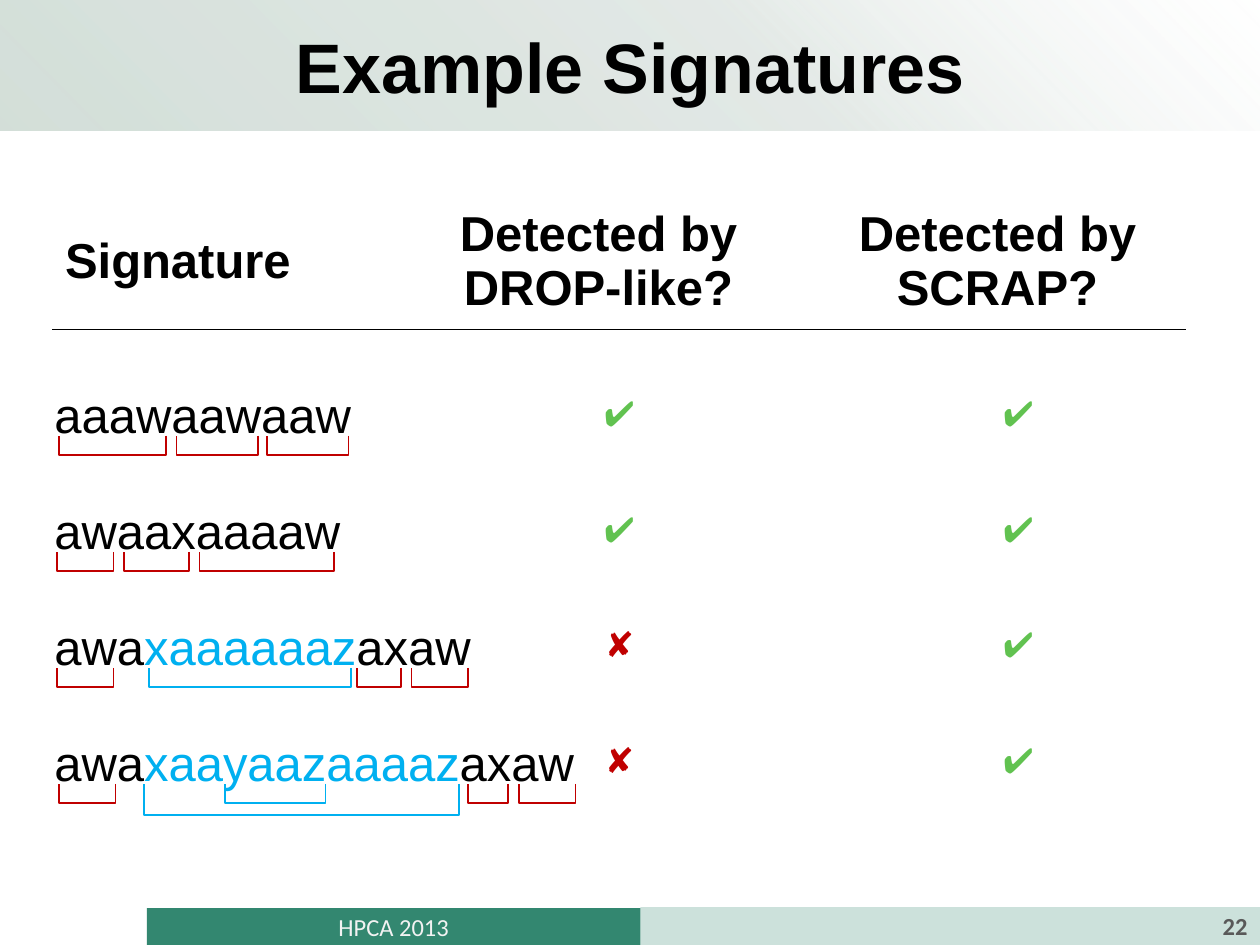
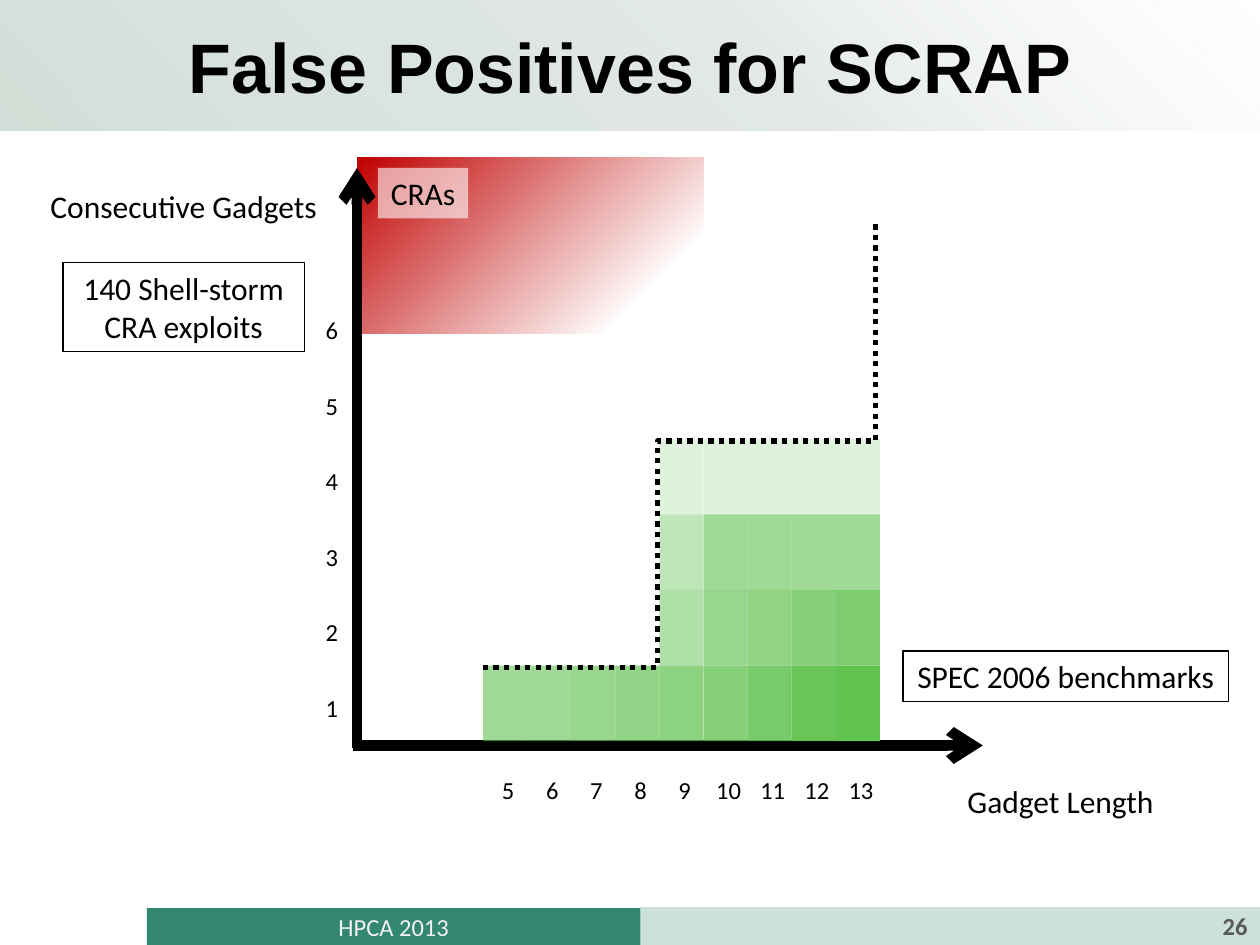
"""Build two slides on gadget signatures and false positives."""
from lxml import etree
from pptx import Presentation
from pptx import util as u
from pptx.dml.color import RGBColor
from pptx.enum import dml, shapes, text
from pptx.oxml.ns import qn

BLACK, WHITE, RED, BLUE, GREEN = "000000", "FFFFFF", "C00000", "00B0F0", "61C250"
BRAND, PALE, GREY = "006A4D", "F2F2F2", "595959"
COLUMNS, ROWS = 120, 90
WIDTH, HEIGHT = u.Inches(10), u.Inches(7.5)
LEFT, CENTER, RIGHT = text.PP_ALIGN.LEFT, text.PP_ALIGN.CENTER, text.PP_ALIGN.RIGHT
TITLE_STOPS = [(0, "9BB5A8", 44), (61, "C3D1CA", 45), (100, "E2E8E5", 0)]
RED_STOPS = [(0, RED, 100), (82, WHITE, 100), (100, WHITE, 100)]
NO_TABLE_STYLE = "{2D5ABB26-0587-4C30-8999-92F81FD0307C}"


def color(value):
    return RGBColor.from_string(value)


def across(columns):
    return round(WIDTH * columns / COLUMNS)


def down(rows):
    return round(HEIGHT * rows / ROWS)


def place(left, top, width, height):
    return across(left), down(top), across(width), down(height)


def add_xml(parent, tag, **attributes):
    return etree.SubElement(parent, qn(tag), {key: str(value) for key, value in attributes.items()})


class Page:
    """One slide on a 120 by 90 grid, with the deck's shared style."""

    def __init__(self, deck, title, number):
        self.slide = deck.slides.add_slide(deck.slide_layouts[5])
        self.shapes = self.slide.shapes
        heading = self.shapes.title
        heading.left, heading.top, heading.width, heading.height = place(0, 0, COLUMNS, 12.4)
        self.gradient(heading, TITLE_STOPS, l=0, t=100000, r=100000, b=0)
        self.set_text(heading.text_frame, title, 40, font="Arial", bold=True)
        self.box((14, 86.5, 47, 3.6), "HPCA 2013", 14, PALE, fill=BRAND, alpha=80)
        self.box((61, 86.4, 59, 3.6), str(number), 14, GREY, bold=True, align=RIGHT,
                 fill=BRAND, alpha=20)

    def set_text(self, frame, content, size, ink=BLACK, font="Calibri", bold=False,
                 align=CENTER, wrap=True):
        frame.auto_size = text.MSO_AUTO_SIZE.NONE
        frame.word_wrap = wrap
        frame.vertical_anchor = text.MSO_ANCHOR.MIDDLE
        self.paragraph(frame.paragraphs[0], content, size, ink, font, bold, align)

    def paragraph(self, para, content, size, ink, font, bold, align):
        para.alignment = align
        para.font.size, para.font.name, para.font.bold = u.Pt(size), font, bold
        para.font.color.rgb = color(ink)
        spans = [(content, ink)] if isinstance(content, str) else content
        for words, span_ink in spans:
            span = para.add_run()
            span.text = words
            if span_ink != ink:
                span.font.color.rgb = color(span_ink)

    def gradient(self, shape, stops, **focus):
        shape.fill.gradient()
        grad = shape.element.spPr.find(qn("a:gradFill"))
        grad.clear()
        grad.set("rotWithShape", "1")
        stop_list = add_xml(grad, "a:gsLst")
        for position, value, alpha in stops:
            stop = add_xml(stop_list, "a:gs", pos=position * 1000)
            add_xml(add_xml(stop, "a:srgbClr", val=value), "a:alpha", val=alpha * 1000)
        add_xml(add_xml(grad, "a:path", path="circle"), "a:fillToRect", **focus)

    def paint(self, shape, fill=None, alpha=100, line=None, weight=1):
        shape.shadow.inherit = False
        if fill:
            shape.fill.solid()
            shape.fill.fore_color.rgb = color(fill)
            if alpha < 100:
                tint = next(shape.element.spPr.iter(qn("a:srgbClr")))
                add_xml(tint, "a:alpha", val=alpha * 1000)
        else:
            shape.fill.background()
        if line:
            shape.line.color.rgb = color(line)
            shape.line.width = u.Pt(weight)
        else:
            shape.line.fill.background()

    def box(self, area, content="", size=18, ink=BLACK, bold=False, align=CENTER,
            wrap=True, **look):
        box = self.shapes.add_shape(shapes.MSO_SHAPE.RECTANGLE, *place(*area))
        self.paint(box, **look)
        if content:
            self.set_text(box.text_frame, content, size, ink, bold=bold, align=align, wrap=wrap)
        return box

    def label(self, area, content, size=18, **style):
        self.set_text(self.shapes.add_textbox(*place(*area)).text_frame, content, size, **style)

    def bracket(self, left, top, width, ink=RED, depth=1.8):
        area = (left + (width - depth) / 2, top + (depth - width) / 2, depth, width)
        bracket = self.shapes.add_shape(shapes.MSO_SHAPE.LEFT_BRACKET, *place(*area))
        bracket.adjustments[0] = 0
        bracket.rotation = 270
        self.paint(bracket, line=ink)

    def table(self, left, top, widths, cells, size, bold=False, underline=False):
        frame = self.shapes.add_table(1, len(widths), *place(left, top, sum(widths), 13))
        next(frame.element.iter(qn("a:tableStyleId"))).text = NO_TABLE_STYLE
        table = frame.table
        table.first_row = table.horz_banding = False
        for index, (width, (content, ink, align)) in enumerate(zip(widths, cells)):
            table.columns[index].width = across(width)
            cell = table.cell(0, index)
            cell.vertical_anchor = text.MSO_ANCHOR.MIDDLE
            self.paragraph(cell.text_frame.paragraphs[0], content, size, ink, "Arial", bold, align)
        if underline:
            for properties in frame.element.iter(qn("a:tcPr")):
                rule = add_xml(properties, "a:lnB", w=u.Pt(1))
                add_xml(add_xml(rule, "a:solidFill"), "a:srgbClr", val=BLACK)
        for cell in table.iter_cells():
            cell.fill.background()

    def arrow(self, start, end):
        arrow = self.shapes.add_connector(
            shapes.MSO_CONNECTOR.STRAIGHT,
            across(start[0]), down(start[1]), across(end[0]), down(end[1]))
        arrow.line.color.rgb = color(BLACK)
        arrow.line.width = u.Pt(6)
        add_xml(arrow.element.spPr.find(qn("a:ln")), "a:tailEnd", type="arrow")
        add_xml(arrow.element.spPr, "a:effectLst")

    def dotted(self, points):
        corners = [(across(x), down(y)) for x, y in points]
        builder = self.shapes.build_freeform(*corners[0], scale=1.0)
        builder.add_line_segments(corners[1:], close=False)
        outline = builder.convert_to_shape()
        self.paint(outline, line=BLACK, weight=3)
        outline.line.dash_style = dml.MSO_LINE.ROUND_DOT


def signatures(deck):
    page = Page(deck, "Example Signatures", 22)
    header = [("Signature", BLACK, LEFT), ("Detected by DROP-like?", BLACK, CENTER),
              ("Detected by SCRAP?", BLACK, CENTER)]
    page.table(5, 18.4, [32, 40, 36], header, 28, bold=True, underline=True)
    yes, no = ("✔", GREEN, CENTER), ("✘", RED, CENTER)
    examples = [
        ("aaawaawaaw", 31, yes, [(5.6, 10.2), (16.8, 7.8), (25.4, 7.8)]),
        ("awaaxaaaaw", 30, yes, [(5.4, 5.4), (11.8, 6.2), (19, 12.8)]),
        ([("awa", BLACK), ("xaaaaaaz", BLUE), ("axaw", BLACK)], 42.6, no,
         [(5.4, 5.4), (14.2, 19.2, BLUE), (34, 4.2), (39.2, 5.4)]),
        ([("awa", BLACK), ("xaayaazaaaaz", BLUE), ("axaw", BLACK)], 52.6, no,
         [(5.6, 5.4), (44.6, 3.8), (49.4, 5.4), (21.4, 9.6, BLUE), (13.7, 30, BLUE, 3)]),
    ]
    for index, (signature, width, drop_mark, brackets) in enumerate(examples):
        top = 36 + 11.05 * index
        page.label((4, top, width, 6.8), signature, 28, font="Arial", align=LEFT, wrap=False)
        page.table(39, 33 + 11 * index, [40, 36], [drop_mark, yes], 20)
        for left, span, *style in brackets:
            page.bracket(left, top + 5.5, span, *style)


def false_positives(deck):
    page = Page(deck, "False Positives for SCRAP", 26)
    attacks = page.box((34, 15, 33, 16.8))
    page.gradient(attacks, RED_STOPS, l=0, t=0, r=100000, b=100000)
    page.box((36, 16, 8.6, 4.8), "CRAs", wrap=False, fill=WHITE, alpha=60)
    page.label((88, 73.9, 26, 4.8), "Gadget Length")
    page.label((2, 17.2, 31, 4.8), "Consecutive Gadgets")
    page.arrow((34, 71.2), (34, 16))
    page.arrow((33.6, 71), (93.6, 71))
    step_x, step_y = 4.2, 7.2
    densities = [[60, 60, 65, 68, 72, 76, 85, 95, 100], [50, 65, 70, 76, 82],
                 [40, 60, 60, 60, 60], [20] * 5]
    for level, row in enumerate(densities):
        for column, alpha in enumerate(row, 9 - len(row)):
            page.box((46 + step_x * column, 63.4 - step_y * level, step_x, step_y),
                     fill=GREEN, alpha=alpha)
    page.dotted([(46, 63.6), (62.6, 63.6), (62.6, 42), (83.4, 42), (83.4, 21)])
    for column in range(9):
        page.label((46 + step_x * column, 71.6, 4.8, step_y), str(column + 5), 14, wrap=False)
    for level in range(6):
        page.label((29.2, 63.8 - step_y * level, 4.8, step_y), str(level + 1), 14, wrap=False)
    page.box((86, 62, 31, 4.8), "SPEC 2006 benchmarks", wrap=False, line=BLACK, weight=0.75)
    page.box((6, 25, 23, 8.5), "140 Shell-storm CRA exploits", line=BLACK, weight=0.75)


def main():
    deck = Presentation()
    deck.slide_width, deck.slide_height = WIDTH, HEIGHT
    signatures(deck)
    false_positives(deck)
    deck.save("out.pptx")


if __name__ == "__main__":
    main()
